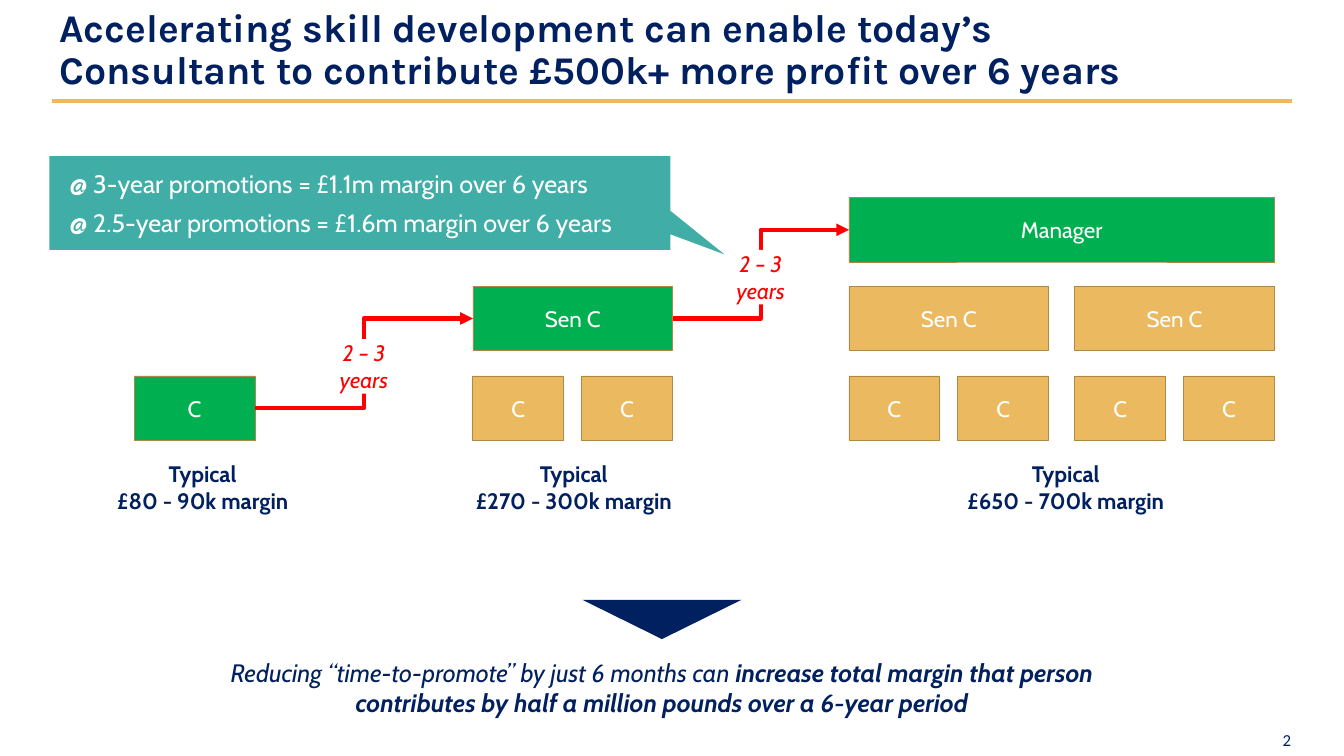
from lxml.etree import SubElement
from pptx import Presentation
from pptx.dml.color import RGBColor
from pptx.enum.shapes import MSO_CONNECTOR, MSO_SHAPE
from pptx.enum.text import MSO_ANCHOR, MSO_AUTO_SIZE, PP_ALIGN
from pptx.oxml.ns import qn
from pptx.util import Inches, Pt

NAVY = RGBColor(0x00, 0x20, 0x60)
GOLD = RGBColor(0xEB, 0xB9, 0x5F)
BROWN = RGBColor(0xAE, 0x89, 0x46)
GREEN = RGBColor(0x00, 0xB0, 0x50)
TEAL = RGBColor(0x40, 0xAE, 0xA6)
RED = RGBColor(0xFF, 0x00, 0x00)
WHITE = RGBColor(0xFF, 0xFF, 0xFF)

BOX_H = 0.64
ROW_TOPS = [3.73, 2.84, 1.96]  # consultant, senior consultant, manager
C_W, C_STEP = 0.9, 1.08
TEAM_W = C_STEP + C_W
TEAM_STEP = 2.24


def add_run(p, text, size, color, font="Cabin", bold=False, italic=False):
    r = p.add_run()
    r.text = text
    f = r.font
    f.name, f.size, f.bold, f.italic = font, Pt(size), bold, italic
    f.color.rgb = color


def add_lines(p, lines, *args, **kwargs):
    """Put several lines in one paragraph, with line breaks between them."""
    for i, line in enumerate(lines):
        if i:
            p.add_line_break()
        add_run(p, line, *args, **kwargs)


def set_margins(tf, margin):
    tf.margin_left = tf.margin_right = Inches(margin)
    tf.margin_top = tf.margin_bottom = Inches(margin)


def add_text(s, left, top, width, height, margin=0.0, wrap=True, align=PP_ALIGN.CENTER):
    """Add an empty text box and return it with its first paragraph."""
    sp = s.shapes.add_textbox(Inches(left), Inches(top), Inches(width), Inches(height))
    tf = sp.text_frame
    tf.word_wrap = wrap
    set_margins(tf, margin)
    p = tf.paragraphs[0]
    p.alignment = align
    return sp, p


def add_filled(s, kind, left, top, width, height, fill):
    sp = s.shapes.add_shape(kind, Inches(left), Inches(top), Inches(width), Inches(height))
    sp.shadow.inherit = False
    sp.fill.solid()
    sp.fill.fore_color.rgb = fill
    sp.line.fill.background()
    return sp


def style_line(line, color):
    line.line.color.rgb = color
    line.line.width = Pt(3)
    SubElement(line._element.spPr, qn("a:effectLst"))


def add_role(s, name, left, row, width, fill=GOLD):
    sp = add_filled(s, MSO_SHAPE.RECTANGLE, left, ROW_TOPS[row], width, BOX_H, fill)
    sp.line.color.rgb = BROWN
    sp.line.width = Pt(0.5)
    sp.text_frame.vertical_anchor = MSO_ANCHOR.MIDDLE
    p = sp.text_frame.paragraphs[0]
    p.alignment = PP_ALIGN.CENTER
    add_run(p, name, 16, WHITE)
    return sp


def add_team(s, left, lead_fill=GOLD):
    """A senior consultant above two consultants; returns the senior's box."""
    for i in range(2):
        add_role(s, "C", left + i * C_STEP, 0, C_W)
    return add_role(s, "Sen C", left, 1, TEAM_W, lead_fill)


def add_promotion(s, junior, senior):
    arrow = s.shapes.add_connector(MSO_CONNECTOR.ELBOW, 0, 0, 0, 0)
    arrow.begin_connect(junior, 3)
    arrow.end_connect(senior, 1)
    style_line(arrow, RED)
    SubElement(arrow.line._get_or_add_ln(), qn("a:tailEnd"), type="triangle")

    width, height = 0.54, 0.54
    mid_x = (arrow.begin_x + arrow.end_x) / 2 / Inches(1)
    mid_y = (arrow.begin_y + arrow.end_y) / 2 / Inches(1)
    sp, p = add_text(s, mid_x - width / 2, mid_y - 0.24, width, height, wrap=False)
    sp.fill.solid()
    sp.fill.fore_color.rgb = WHITE
    add_lines(p, ["2 – 3", "years"], 16, RED, italic=True)


def add_margin(s, center, amount):
    width = 2.44
    _, p = add_text(s, center - width / 2, 4.52, width, BOX_H, 0.05, wrap=False)
    add_lines(p, ["Typical", amount], 16, NAVY, bold=True)


def add_career_path(s):
    consultant = add_role(s, "C", 1.33, 0, 1.2, GREEN)
    senior = add_team(s, 4.69, GREEN)
    manager_left = 8.42
    for i in range(2):
        add_team(s, manager_left + i * TEAM_STEP)
    manager = add_role(s, "Manager", manager_left, 2, TEAM_STEP + TEAM_W, GREEN)

    add_promotion(s, consultant, senior)
    add_promotion(s, senior, manager)
    for center, amount in [(2.01, "£80 - 90k margin"), (5.69, "£270 - 300k margin"),
                           (10.57, "£650 - 700k margin")]:
        add_margin(s, center, amount)


def add_header(s, left, top, width, height):
    title = s.shapes.title
    title.left, title.top = Inches(left), Inches(top)
    title.width, title.height = Inches(width), Inches(height)
    tf = title.text_frame
    tf.auto_size = MSO_AUTO_SIZE.NONE
    tf.word_wrap = True
    tf.vertical_anchor = MSO_ANCHOR.MIDDLE
    p = tf.paragraphs[0]
    p.alignment = PP_ALIGN.LEFT
    p.line_spacing = 0.9
    add_lines(p, ["Accelerating skill development can enable today’s",
                  "Consultant to contribute £500k+ more profit over 6 years"],
              28, NAVY, "Karla", bold=True)
    rule = s.shapes.add_connector(MSO_CONNECTOR.STRAIGHT, Inches(left + 0.03), Inches(1),
                                  Inches(left + width), Inches(1))
    style_line(rule, GOLD)


def add_callout(s, left, top, width, height):
    sp = add_filled(s, MSO_SHAPE.RECTANGULAR_CALLOUT, left, top, width, height, TEAL)
    sp.adjustments[0], sp.adjustments[1] = 0.587, 0.548
    tf = sp.text_frame
    tf.vertical_anchor = MSO_ANCHOR.MIDDLE
    for i, text in enumerate(["@ 3-year promotions = £1.1m margin over 6 years",
                              "@ 2.5-year promotions = £1.6m margin over 6 years"]):
        p = tf.add_paragraph() if i else tf.paragraphs[0]
        p.alignment = PP_ALIGN.LEFT
        p.space_before = Pt(6)
        p._p.get_or_add_pPr().set("marL", str(Inches(0.1)))
        add_run(p, text, 18, WHITE)


def add_conclusion(s, left, top, width, height):
    arrow_w = 1.58
    arrow = add_filled(s, MSO_SHAPE.DOWN_ARROW, left + (width - arrow_w) / 2, top - 0.53,
                       arrow_w, 0.39, NAVY)
    arrow.adjustments[0], arrow.adjustments[1] = 0.5, 1
    _, p = add_text(s, left, top, width, height, 0.04)
    add_run(p, "Reducing “time-to-promote” by just 6 months can ", 18, NAVY, italic=True)
    add_run(p, "increase total margin that person contributes by half a million pounds "
               "over a 6-year period", 18, NAVY, bold=True, italic=True)


def add_page_number(s, left, top, width, height):
    _, p = add_text(s, left, top, width, height, align=PP_ALIGN.LEFT)
    add_run(p, "2", 12, NAVY, "Calibri")


def main():
    prs = Presentation()
    prs.slide_width, prs.slide_height = Inches(13.33), Inches(7.5)
    s = prs.slides.add_slide(prs.slide_layouts[5])
    add_header(s, 0.49, 0.08, 12.32, 0.85)
    add_career_path(s)
    add_conclusion(s, 1.98, 6.48, 9.17, 0.58)
    add_callout(s, 0.49, 1.55, 6.16, 0.93)
    add_page_number(s, 12.72, 7.24, 0.18, 0.2)
    prs.save("out.pptx")


if __name__ == "__main__":
    main()
